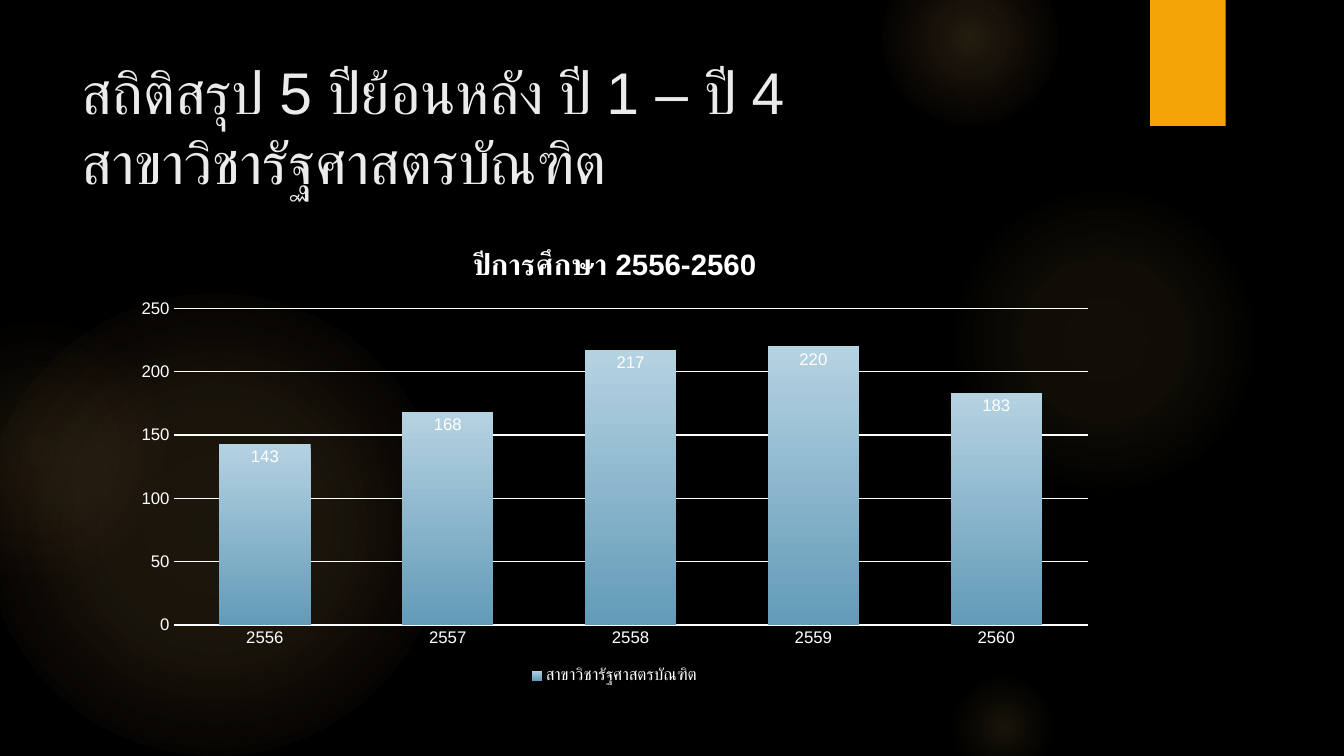
import pptx
import pptx.chart.data
import pptx.dml.color
import pptx.enum.chart
import pptx.enum.shapes
import pptx.enum.text
import pptx.oxml
import pptx.oxml.ns
import pptx.util

Pt = pptx.util.Pt
FACE = "Arial"
WHITE = "FFFFFF"
GLOW = "FAC96A"
PEACH = "F59B74"
SPACE = pptx.oxml.ns.nsdecls("a")
RADIAL = ('<a:path %s path="circle"><a:fillToRect l="50000" t="50000" '
          'r="50000" b="50000"/></a:path>' % SPACE)
DOWN = '<a:lin %s ang="5400000" scaled="0"/>' % SPACE
SHADE = ('<a:effectLst %s><a:outerShdw blurRad="38100" dist="25400" dir="5400000">'
         '<a:srgbClr val="000000"><a:alpha val="45000"/></a:srgbClr>'
         '</a:outerShdw></a:effectLst>' % SPACE)

# left, top, size, then stops of (place %, colour, opacity %)
LIGHTS = [
    (-12, 210, 330, [(0, GLOW, 11), (36, GLOW, 10), (75, GLOW, 0)]),
    (-66, 228, 186, [(0, GLOW, 8), (36, GLOW, 5), (71, PEACH, 0)]),
    (677.5, 132, 222, [(0, GLOW, 7), (36, GLOW, 6), (69, GLOW, 0)]),
    (630, -36, 126, [(0, GLOW, 14), (36, GLOW, 7), (73, GLOW, 0)]),
    (677.5, 480, 78, [(0, GLOW, 10), (31, GLOW, 5), (66, GLOW, 0)]),
]
MAJOR = "สาขาวิชารัฐศาสตรบัณฑิต"
YEARS = ["2556", "2557", "2558", "2559", "2560"]
COUNTS = [143, 168, 217, 220, 183]


def tint(color, code):
    color.rgb = pptx.dml.color.RGBColor.from_string(code)


def paint(fill, code):
    fill.solid()
    tint(fill.fore_color, code)


def style(font, size, code=WHITE, bold=False):
    font.name, font.size, font.bold = FACE, Pt(size), bold
    tint(font.color, code)


def blend(fill, props, stops, course):
    """Fill with a gradient whose stops carry their own opacity."""
    fill.gradient()
    grad = props.find(pptx.oxml.ns.qn("a:gradFill"))
    for child in list(grad):
        grad.remove(child)
    marks = "".join(
        '<a:gs pos="%d"><a:srgbClr val="%s"><a:alpha val="%d"/></a:srgbClr></a:gs>'
        % (place * 1000, code, alpha * 1000) for place, code, alpha in stops)
    grad.append(pptx.oxml.parse_xml("<a:gsLst %s>%s</a:gsLst>" % (SPACE, marks)))
    grad.append(pptx.oxml.parse_xml(course))


def add_form(slide, kind, left, top, width, height):
    form = slide.shapes.add_shape(kind, Pt(left), Pt(top), Pt(width), Pt(height))
    form.line.fill.background()
    return form


def add_lights(slide):
    for left, top, size, stops in LIGHTS:
        light = add_form(slide, pptx.enum.shapes.MSO_SHAPE.OVAL, left, top, size, size)
        light.shadow.inherit = False
        blend(light.fill, light._element.spPr, stops, RADIAL)


def add_flag(slide, left, top, width, height):
    flag = add_form(slide, pptx.enum.shapes.MSO_SHAPE.RECTANGLE,
                    left, top, width, height)
    paint(flag.fill, "F5A408")
    flag._element.spPr.append(pptx.oxml.parse_xml(SHADE))


def set_title(slide, left, top, width, height):
    title = slide.shapes.title
    title.left, title.top = Pt(left), Pt(top)
    title.width, title.height = Pt(width), Pt(height)
    frame = title.text_frame
    frame.word_wrap = True
    frame.auto_size = pptx.enum.text.MSO_AUTO_SIZE.NONE
    frame.vertical_anchor = pptx.enum.text.MSO_ANCHOR.TOP
    line = frame.paragraphs[0]
    line.text = "สถิติสรุป 5 ปีย้อนหลัง ปี 1 – ปี 4\v" + MAJOR
    line.alignment = pptx.enum.text.PP_ALIGN.LEFT
    for run in line.runs:
        style(run.font, 42, "EBEBEB")
    slide.shapes._spTree.append(title._element)


def style_axes(chart):
    years, counts = chart.category_axis, chart.value_axis
    for axis in (years, counts):
        axis.major_tick_mark = pptx.enum.chart.XL_TICK_MARK.NONE
        axis.minor_tick_mark = pptx.enum.chart.XL_TICK_MARK.NONE
        style(axis.tick_labels.font, 12)
    years.format.line.width = Pt(1)
    tint(years.format.line.color, WHITE)
    counts.format.line.fill.background()
    counts.minimum_scale, counts.maximum_scale, counts.major_unit = 0, 250, 50
    counts.has_major_gridlines = True
    grid = counts.major_gridlines.format.line
    grid.width = Pt(0.75)
    tint(grid.color, WHITE)


def style_bars(plot):
    plot.gap_width, plot.overlap, plot.vary_by_categories = 100, -24, False
    bars = plot.series[0]
    blend(bars.format.fill, bars._element.spPr,
          [(0, "B5D2E1", 100), (100, "639BB8", 100)], DOWN)
    labels = bars.data_labels
    labels.show_value = True
    labels.position = pptx.enum.chart.XL_LABEL_POSITION.INSIDE_END
    style(labels.font, 12)


def add_graph(slide, left, top, width, height):
    data = pptx.chart.data.CategoryChartData()
    data.categories = YEARS
    data.add_series(MAJOR, COUNTS)
    chart = slide.shapes.add_chart(
        pptx.enum.chart.XL_CHART_TYPE.COLUMN_CLUSTERED,
        Pt(left), Pt(top), Pt(width), Pt(height), data).chart
    style(chart.font, 10)
    chart.has_title = True
    head = chart.chart_title.text_frame.paragraphs[0]
    head.text = "ปีการศึกษา 2556-2560"
    style(head.runs[0].font, 21, bold=True)
    chart.chart_title.include_in_layout = False
    chart.has_legend = True
    chart.legend.position = pptx.enum.chart.XL_LEGEND_POSITION.BOTTOM
    chart.legend.include_in_layout = False
    style(chart.legend.font, 12)
    style_axes(chart)
    style_bars(chart.plots[0])


def main():
    deck = pptx.Presentation()
    deck.slide_width, deck.slide_height = Pt(960), Pt(540)
    slide = deck.slides.add_slide(deck.slide_layouts.get_by_name("Title Only"))
    paint(slide.background.fill, "000000")
    add_lights(slide)
    add_flag(slide, 821.5, 0, 54, 90)
    set_title(slide, 51, 36, 741, 110)
    add_graph(slide, 87, 161, 704, 330.5)
    deck.save("out.pptx")


if __name__ == "__main__":
    main()
